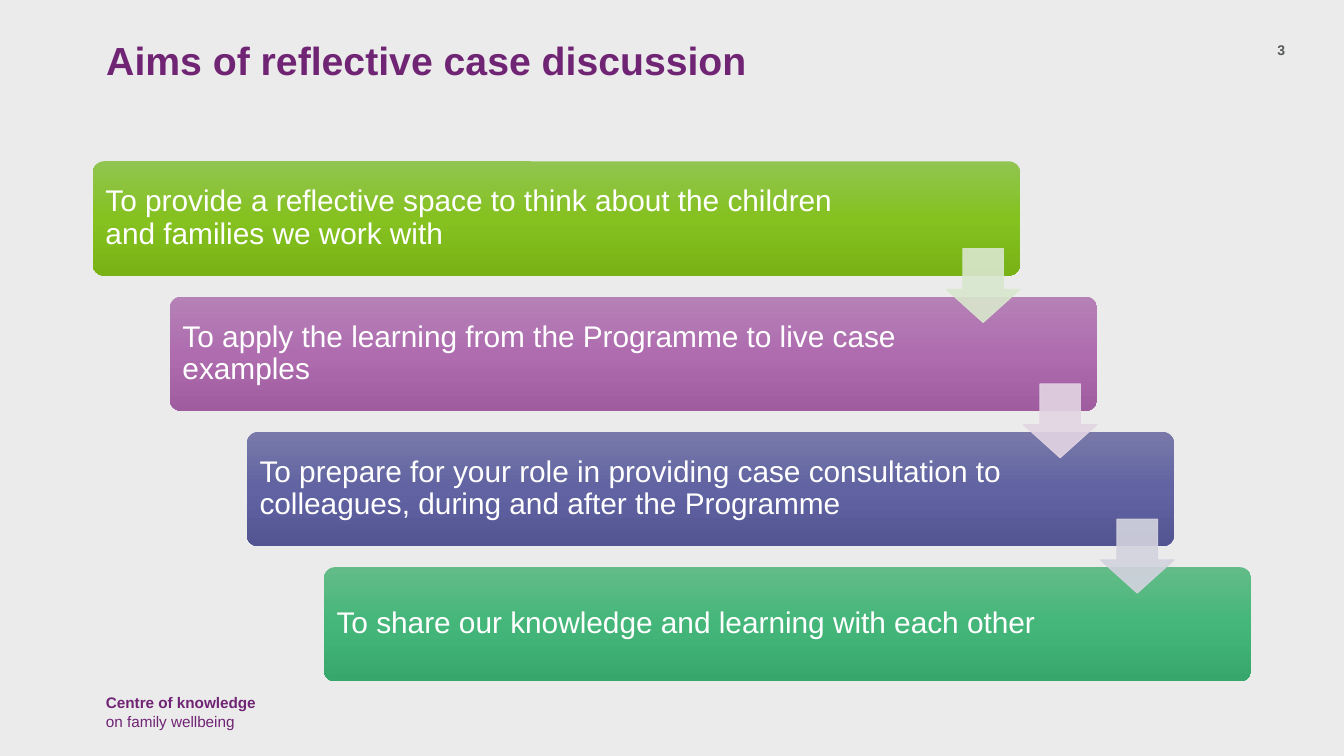
from copy import deepcopy

from lxml import etree
from pptx import Presentation
from pptx.dml.color import RGBColor
from pptx.enum.shapes import MSO_SHAPE
from pptx.enum.text import MSO_ANCHOR, PP_ALIGN
from pptx.oxml.ns import qn
from pptx.util import Inches, Pt

ROUNDED = MSO_SHAPE.ROUNDED_RECTANGLE
DOWN_ARROW = MSO_SHAPE.DOWN_ARROW
TOP = MSO_ANCHOR.TOP
MIDDLE = MSO_ANCHOR.MIDDLE
LEFT = PP_ALIGN.LEFT
RIGHT = PP_ALIGN.RIGHT

FONT = "Arial"
COLORS = {
    "background": "ECEBEC",
    "purple": "702474",
    "grey": "555859",
    "white": "FFFFFF",
}
AIMS = [
    ("To provide a reflective space to think about the children and families we work with",
     ("91C551", "85C11F", "78B215"), "D9E7CD"),
    ("To apply the learning from the Programme to live case examples",
     ("B581B6", "AF6DB0", "9F5DA0"), "E3D5E3"),
    ("To prepare for your role in providing case consultation to colleagues, "
     "during and after the Programme",
     ("7879A9", "6163A2", "535593"), "D3D3DF"),
    ("To share our knowledge and learning with each other",
     ("63BC88", "44B679", "38A76B"), None),
]
FIRST_LEFT, FIRST_TOP = 0.69, 1.2
LAST_LEFT, LAST_TOP = 2.41, 4.22
BAR_WIDTH, BAR_HEIGHT = 6.9, 0.85
ARROW_SIZE = 0.55
ARROW_RIGHT, ARROW_DOWN = 6.35, 0.65


def rgb(color):
    return RGBColor.from_string(color)


def place(shape, left, top, width, height):
    shape.left, shape.top = Inches(left), Inches(top)
    shape.width, shape.height = Inches(width), Inches(height)


def write(shape, text, size, color, bold=False, align=LEFT, anchor=TOP, spacing=1.0):
    text_frame = shape.text_frame
    text_frame.text = text
    text_frame.word_wrap = True
    text_frame.vertical_anchor = anchor
    paragraph = text_frame.paragraphs[0]
    paragraph.alignment = align
    paragraph.line_spacing = spacing
    for run in paragraph.runs:
        run.font.name = FONT
        run.font.size = Pt(size)
        run.font.bold = bold
        run.font.color.rgb = rgb(color)
    return paragraph


def add_title(slide, text):
    title = slide.shapes.title
    place(title, 0.69, 0.26, 8.36, 0.7)
    write(title, text, 21, COLORS["purple"], bold=True, spacing=0.9)


def add_label(slide, box, text, size, color, **style):
    label = slide.shapes.add_textbox(*(Inches(value) for value in box))
    return write(label, text, size, color, **style)


def fill_gradient(shape, colors):
    shape.fill.gradient()
    shape.fill.gradient_angle = 270
    first_stop = shape.fill.gradient_stops[0]._gs
    first_stop.addnext(deepcopy(first_stop))
    for stop, position, color in zip(shape.fill.gradient_stops, (0, 0.5, 1), colors):
        stop.position = position
        stop.color.rgb = rgb(color)


def add_bar(slide, left, top, text, colors):
    bar = slide.shapes.add_shape(ROUNDED, Inches(left), Inches(top),
                                 Inches(BAR_WIDTH), Inches(BAR_HEIGHT))
    bar.adjustments[0] = 0.1
    bar.shadow.inherit = False
    bar.line.fill.background()
    fill_gradient(bar, colors)
    text_frame = bar.text_frame
    text_frame.margin_left = text_frame.margin_top = text_frame.margin_bottom = Inches(0.07)
    text_frame.margin_right = Inches(1.2)
    write(bar, text, 16, COLORS["white"], anchor=MIDDLE, spacing=0.9)


def add_arrow(slide, left, top, color):
    arrow = slide.shapes.add_shape(DOWN_ARROW, Inches(left), Inches(top),
                                   Inches(ARROW_SIZE), Inches(ARROW_SIZE))
    arrow.adjustments[0] = 0.55
    arrow.adjustments[1] = 0.45
    arrow.shadow.inherit = False
    arrow.line.width = Pt(0.5)
    for fill in (arrow.fill, arrow.line.fill):
        fill.solid()
        fill.fore_color.rgb = rgb(color)
    for element in arrow._element.spPr.iter(qn("a:srgbClr")):
        etree.SubElement(element, qn("a:alpha"), val="90000")


def add_staircase(slide):
    step_right = (LAST_LEFT - FIRST_LEFT) / (len(AIMS) - 1)
    step_down = (LAST_TOP - FIRST_TOP) / (len(AIMS) - 1)
    corners = [(FIRST_LEFT + index * step_right, FIRST_TOP + index * step_down)
               for index in range(len(AIMS))]
    for (left, top), (text, colors, _) in zip(corners, AIMS):
        add_bar(slide, left, top, text, colors)
    for (left, top), (_, _, arrow_color) in zip(corners, AIMS):
        if arrow_color:
            add_arrow(slide, left + ARROW_RIGHT, top + ARROW_DOWN, arrow_color)


def main():
    presentation = Presentation()
    presentation.slide_width = Inches(10)
    presentation.slide_height = Inches(10 * 9 / 16)
    slide = presentation.slides.add_slide(presentation.slide_layouts[5])
    slide.background.fill.solid()
    slide.background.fill.fore_color.rgb = rgb(COLORS["background"])

    footer = add_label(slide, (0.69, 5.11, 1.79, 0.38),
                       "Centre of knowledge\von family wellbeing", 8.2, COLORS["purple"])
    footer.runs[0].font.bold = True
    add_title(slide, "Aims of reflective case discussion")
    add_label(slide, (9.15, 0.26, 0.51, 0.26), "3", 7.5, COLORS["grey"],
              bold=True, align=RIGHT)
    add_staircase(slide)
    presentation.save("out.pptx")


if __name__ == "__main__":
    main()
